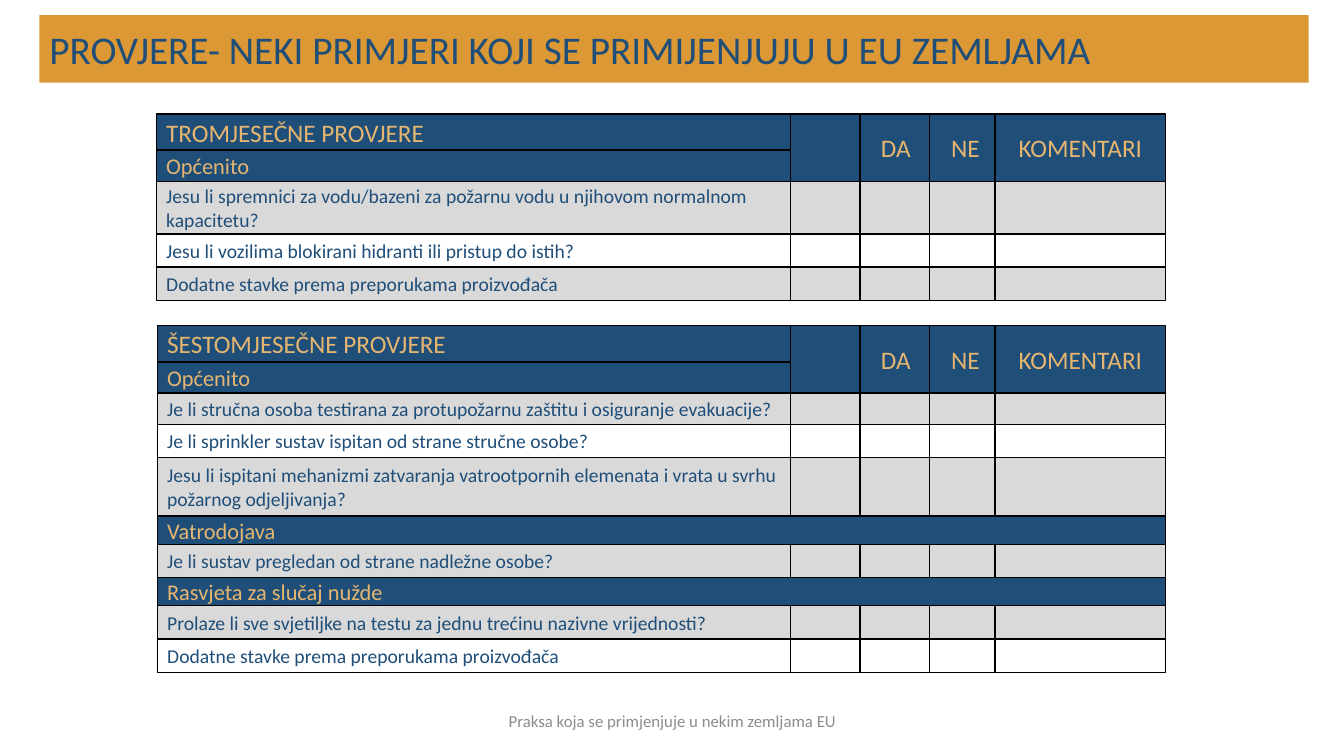
from dataclasses import dataclass
from itertools import cycle

from pptx import Presentation, util as u
from pptx.dml.color import RGBColor
from pptx.enum import shapes, text

NAVY, GOLD, ORANGE = "1F4E79", "E6B670", "DB9835"
GREY, WHITE, BLACK, FOOTER_GREY = "D9D9D9", "FFFFFF", "000000", "8C8C8C"
LEFT, CENTER = text.PP_ALIGN.LEFT, text.PP_ALIGN.CENTER

QUESTION_RIGHT = 7.84
TABLE_RIGHT = 11.56
HEADING_HEIGHT = 0.36
SUBHEADER_HEIGHT = 0.31
HEADER_HEIGHT = HEADING_HEIGHT + SUBHEADER_HEIGHT


@dataclass(frozen=True)
class Column:
    heading: str
    left: float
    width: float


@dataclass(frozen=True)
class Row:
    label: str
    height: float
    is_section: bool = False


@dataclass(frozen=True)
class Checklist:
    title: str
    left: float
    top: float
    rows: tuple[Row, ...]


@dataclass(frozen=True)
class Style:
    size: int
    color: str
    alignment: text.PP_ALIGN = LEFT


HEADING = Style(18, GOLD)
SECTION = Style(16, GOLD)
ANSWER_HEADING = Style(18, GOLD, CENTER)
QUESTION = Style(14, NAVY)
SLIDE_TITLE = Style(28, NAVY)
FOOTER = Style(12, FOOTER_GREY, CENTER)

COLUMNS = (
    Column("", 7.84, 0.71),
    Column("DA", 8.53, 0.71),
    Column("NE", 9.22, 0.71),
    Column("KOMENTARI", 9.87, 1.69),
)

CHECKLISTS = (
    Checklist("TROMJESEČNE PROVJERE", 1.55, 1.13, (
        Row("Jesu li spremnici za vodu/bazeni za požarnu vodu u njihovom "
            "normalnom kapacitetu?", 0.52),
        Row("Jesu li vozilima blokirani hidranti ili pristup do istih?", 0.33),
        Row("Dodatne stavke prema preporukama proizvođača", 0.33),
    )),
    Checklist("ŠESTOMJESEČNE PROVJERE", 1.56, 3.23, (
        Row("Je li stručna osoba testirana za protupožarnu zaštitu i "
            "osiguranje evakuacije?", 0.31),
        Row("Je li sprinkler sustav ispitan od strane stručne osobe?", 0.33),
        Row("Jesu li ispitani mehanizmi zatvaranja vatrootpornih elemenata i "
            "vrata u svrhu požarnog odjeljivanja?", 0.58),
        Row("Vatrodojava", 0.28, True),
        Row("Je li sustav pregledan od strane nadležne osobe?", 0.33),
        Row("Rasvjeta za slučaj nužde", 0.28, True),
        Row("Prolaze li sve svjetiljke na testu za jednu trećinu nazivne "
            "vrijednosti?", 0.33),
        Row("Dodatne stavke prema preporukama proizvođača", 0.33),
    )),
)


def rgb(color: str) -> RGBColor:
    return RGBColor.from_string(color)


def apply(target, values: dict) -> None:
    for name, value in values.items():
        setattr(target, name, value)


def place(shape, left: float, top: float, width: float, height: float) -> None:
    apply(shape, {"left": u.Inches(left), "top": u.Inches(top),
                  "width": u.Inches(width), "height": u.Inches(height)})


def paint(shape, color: str) -> None:
    shape.fill.solid()
    shape.fill.fore_color.rgb = rgb(color)


def write(shape, words: str, style: Style) -> None:
    """Centre the words vertically, using the full height of the shape."""
    frame = shape.text_frame
    apply(frame, {"text": words, "word_wrap": True,
                  "auto_size": text.MSO_AUTO_SIZE.NONE,
                  "vertical_anchor": text.MSO_ANCHOR.MIDDLE,
                  "margin_top": 0, "margin_bottom": 0})
    paragraph = frame.paragraphs[0]
    paragraph.alignment = style.alignment
    font = paragraph.runs[0].font
    apply(font, {"name": "Calibri", "size": u.Pt(style.size), "bold": False})
    font.color.rgb = rgb(style.color)


def add_cell(slide, left: float, top: float, width: float, height: float,
             fill: str, words: str = "", style: Style = QUESTION) -> None:
    cell = slide.shapes.add_shape(shapes.MSO_SHAPE.RECTANGLE, 0, 0, 0, 0)
    place(cell, left, top, width, height)
    cell.shadow.inherit = False
    paint(cell, fill)
    cell.line.color.rgb = rgb(BLACK)
    cell.line.width = u.Pt(1)
    if words:
        write(cell, words, style)


def add_checklist(slide, checklist: Checklist) -> None:
    """Draw the header block, then stack the rows below it."""
    left, top = checklist.left, checklist.top
    question_width = QUESTION_RIGHT - left
    add_cell(slide, left, top, question_width, HEADING_HEIGHT, NAVY,
             checklist.title, HEADING)
    add_cell(slide, left, top + HEADING_HEIGHT, question_width,
             SUBHEADER_HEIGHT, NAVY, "Općenito", SECTION)
    for column in COLUMNS:
        add_cell(slide, column.left, top, column.width, HEADER_HEIGHT, NAVY,
                 column.heading, ANSWER_HEADING)

    row_top, bands = top + HEADER_HEIGHT, cycle((GREY, WHITE))
    for row in checklist.rows:
        if row.is_section:
            add_cell(slide, left, row_top, TABLE_RIGHT - left, row.height,
                     NAVY, row.label, SECTION)
            bands = cycle((GREY, WHITE))
        else:
            band = next(bands)
            add_cell(slide, left, row_top, question_width, row.height, band,
                     row.label)
            for column in COLUMNS:
                add_cell(slide, column.left, row_top, column.width,
                         row.height, band)
        row_top += row.height


def main() -> None:
    presentation = Presentation()
    apply(presentation, {"slide_width": u.Inches(13.33),
                         "slide_height": u.Inches(7.5)})
    slide = presentation.slides.add_slide(presentation.slide_layouts[5])

    title = slide.shapes.title
    place(title, 0.39, 0.15, 12.59, 0.67)
    paint(title, ORANGE)
    write(title, "PROVJERE- NEKI PRIMJERI KOJI SE PRIMIJENJUJU U EU ZEMLJAMA",
          SLIDE_TITLE)

    for checklist in CHECKLISTS:
        add_checklist(slide, checklist)

    footer = slide.shapes.add_textbox(0, 0, 0, 0)
    place(footer, 4.42, 6.95, 4.5, 0.4)
    write(footer, "Praksa koja se primjenjuje u nekim zemljama EU", FOOTER)

    presentation.save("out.pptx")


if __name__ == "__main__":
    main()
